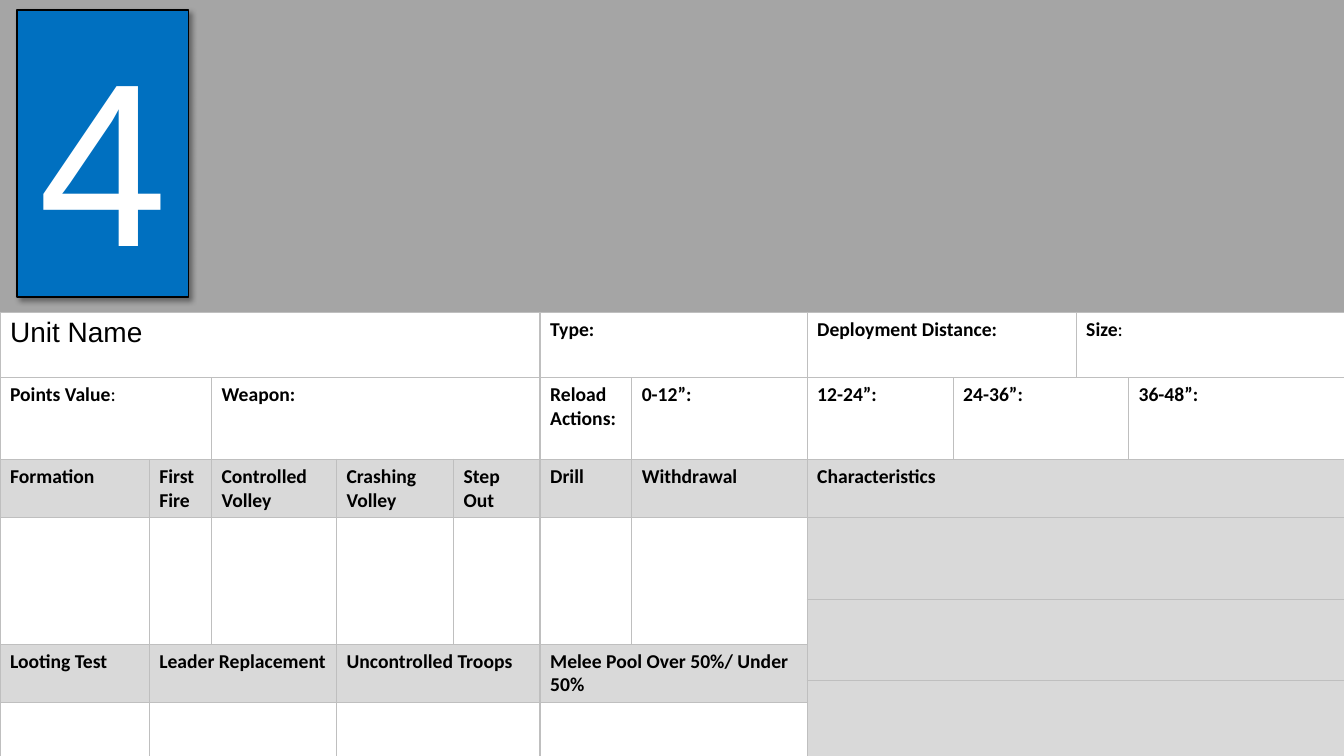
from lxml import etree
from pptx import Presentation
from pptx import util as u
from pptx.dml.color import RGBColor
from pptx.enum import shapes, text
from pptx.oxml import ns

COLS = [3.76, 1.57, 3.15, 2.95, 2.18, 2.31, 4.42, 3.68, 3.1, 1.32, 5.46]
ROWS = [7.95, 1.65, 2.06, 1.42, 2.06, 1.14, 0.91, 0.53, 1.42]
WHITE, GREY, BANNER, BORDER = "FFFFFF", "D9D9D9", "A5A5A5", "BFBFBF"

# row, column, row span, column span, label
FIELDS = [
    (1, 5, 1, 2, "Type:"),
    (1, 7, 1, 2, "Deployment Distance:"),
    (1, 9, 1, 2, "Size"),
    (2, 0, 1, 2, "Points Value"),
    (2, 2, 1, 3, "Weapon:"),
    (2, 5, 1, 1, "Reload Actions:"),
    (2, 6, 1, 1, "0-12”:"),
    (2, 7, 1, 1, "12-24”:"),
    (2, 8, 1, 2, "24-36”:"),
    (2, 10, 1, 1, "36-48”:"),
]
PLAIN_COLON = ("Size", "Points Value")
ORDERS = ["Formation", "First Fire", "Controlled Volley", "Crashing Volley",
          "Step Out", "Drill", "Withdrawal"]
TESTS = [(0, 1, "Looting Test"), (1, 2, "Leader Replacement"),
         (3, 2, "Uncontrolled Troops"),
         (5, 2, "Melee Pool Over 50%/ Under 50%")]
CHARACTERISTIC_ROWS = [(4, 1), (5, 2), (7, 2)]


def rgb(value):
    return RGBColor.from_string(value)


def add_text(tf, label, font="Calibri", size=14, bold=False, color="000000",
             align=None):
    """Append a run to the first paragraph of a text frame."""
    p = tf.paragraphs[0]
    p.alignment = align
    r = p.add_run()
    r.text = label
    r.font.name = font
    r.font.size = u.Pt(size)
    r.font.bold = bold
    r.font.color.rgb = rgb(color)


def add_xml(parent, tag, **attributes):
    return etree.SubElement(parent, ns.qn(tag), attributes)


def set_borders(cell, colors, width):
    """Draw the left, right, top and bottom edges in the four colours."""
    tcPr = cell._tc.get_or_add_tcPr()
    for side, color in zip("LRTB", colors):
        ln = add_xml(tcPr, f"a:ln{side}", w=str(u.Pt(width)))
        add_xml(add_xml(ln, "a:solidFill"), "a:srgbClr", val=color)


def fill_cell(cell, color):
    cell.fill.solid()
    cell.fill.fore_color.rgb = rgb(color)


def add_field(table, row, col, row_span, col_span, label="", fill=WHITE, **fmt):
    """Merge a block of cells, fill it and write its label."""
    cell = table.cell(row, col)
    if row_span > 1 or col_span > 1:
        cell.merge(table.cell(row + row_span - 1, col + col_span - 1))
    fill_cell(cell, fill)
    if label:
        add_text(cell.text_frame, label, **fmt)
    return cell


def add_grid(s):
    """Add the table with its column widths, row heights and borders."""
    table = s.shapes.add_table(len(ROWS), len(COLS), 0, u.Cm(-0.08),
                               u.Cm(sum(COLS)), u.Cm(sum(ROWS))).table
    table.first_row = table.horz_banding = False
    for column, width in zip(table.columns, COLS):
        column.width = u.Cm(width)
    for i, (row, height) in enumerate(zip(table.rows, ROWS)):
        row.height = u.Cm(height)
        for cell in row.cells:
            if i == 0:
                set_borders(cell, [BANNER] * 3 + [BORDER], 0.5)
            else:
                set_borders(cell, [BORDER] * 4, 1)
            fill_cell(cell, WHITE)
    return table


def add_unit_card(s):
    table = add_grid(s)
    add_field(table, 0, 0, 1, len(COLS), fill=BANNER)
    add_field(table, 1, 0, 1, 5, "Unit Name", font="Arial", size=20)
    for *place, label in FIELDS:
        cell = add_field(table, *place, label, bold=True)
        if label in PLAIN_COLON:
            add_text(cell.text_frame, ":")

    for col, label in enumerate(ORDERS):
        add_field(table, 3, col, 1, 1, label, GREY, bold=True)
        add_field(table, 4, col, 2, 1)
    for col, span, label in TESTS:
        add_field(table, 6, col, 2, span, label, GREY, bold=True)
        add_field(table, 8, col, 1, span)

    add_field(table, 3, 7, 1, 4, "Characteristics", GREY, bold=True)
    for row, span in CHARACTERISTIC_ROWS:
        add_field(table, row, 7, span, 4, fill=GREY)


def add_shadow(sp):
    sp.shadow.inherit = False
    effects = sp._element.spPr.find(ns.qn("a:effectLst"))
    shadow = add_xml(effects, "a:outerShdw", blurRad=str(u.Pt(4)),
                     dist=str(u.Pt(3)), dir=str(45 * 60000), algn="tl",
                     rotWithShape="0")
    color = add_xml(shadow, "a:srgbClr", val="000000")
    add_xml(color, "a:alpha", val="40000")


def add_number_card(s, number):
    sp = s.shapes.add_shape(shapes.MSO_SHAPE.RECTANGLE, u.Cm(0.43), u.Cm(0.25),
                            u.Cm(4.32), u.Cm(7.24))
    sp.fill.solid()
    sp.fill.fore_color.rgb = rgb("0070C0")
    sp.line.color.rgb = rgb("000000")
    sp.line.width = u.Pt(1)
    add_shadow(sp)
    sp.text_frame.vertical_anchor = text.MSO_ANCHOR.MIDDLE
    add_text(sp.text_frame, number, font="Arial", size=166, color=WHITE,
             align=text.PP_ALIGN.CENTER)


def main():
    prs = Presentation()
    prs.slide_width, prs.slide_height = u.Cm(33.87), u.Cm(19.05)
    s = prs.slides.add_slide(prs.slide_layouts[6])
    add_unit_card(s)
    add_number_card(s, "4")
    prs.save("out.pptx")


if __name__ == "__main__":
    main()
